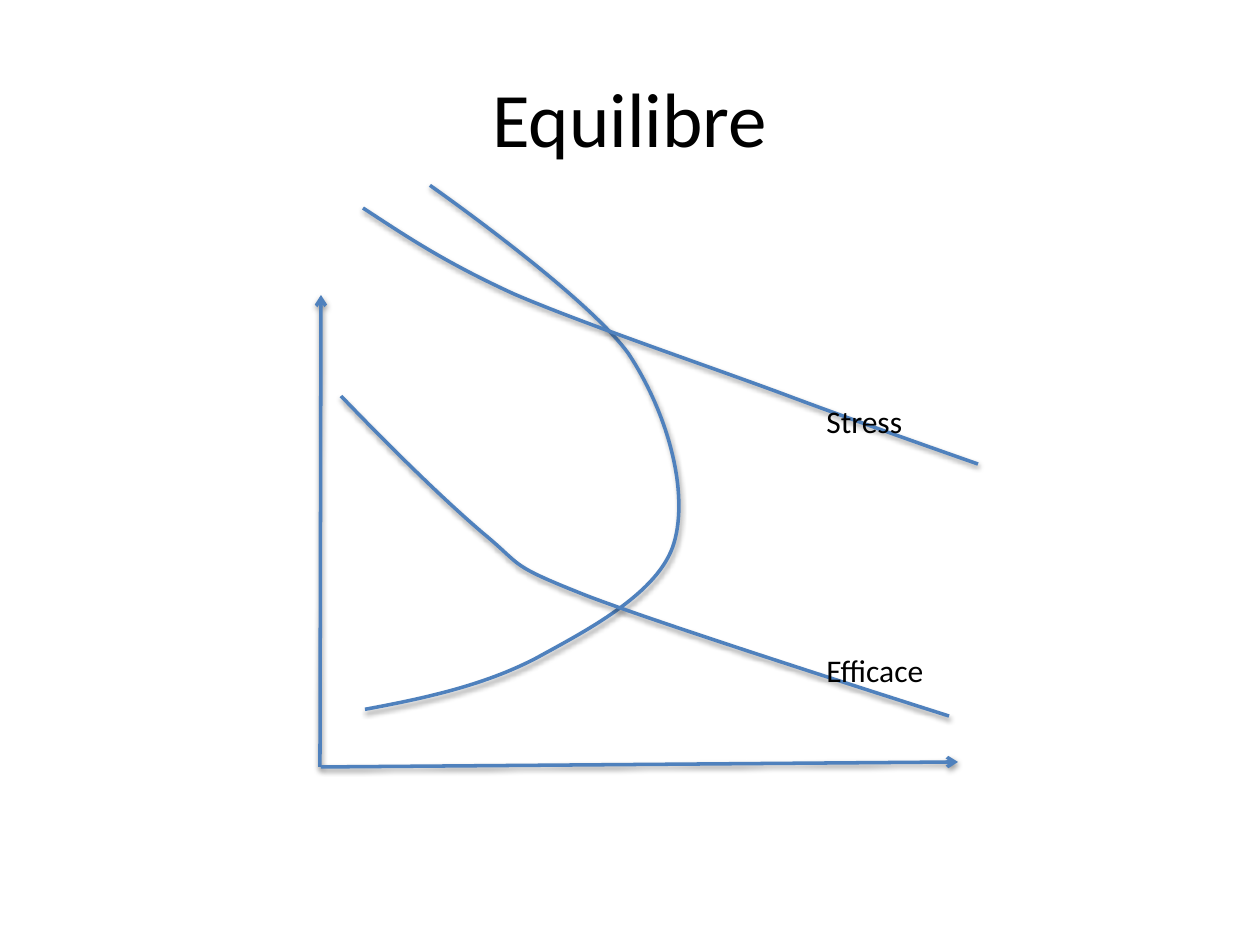
import math
import pptx
import pptx.util
import pptx.dml.color
import pptx.enum.shapes
import pptx.enum.text
import pptx.oxml
import pptx.oxml.ns

PX = 914400 / 126
THEME = {
    "font": "Calibri",
    "ink": pptx.dml.color.RGBColor.from_string("000000"),
    "blue": pptx.dml.color.RGBColor.from_string("4F81BD"),
    "title": pptx.util.Pt(44),
    "label": pptx.util.Pt(18),
    "line": pptx.util.Pt(2),
}
NS = pptx.oxml.ns.nsdecls("a")
SHADE = (
    f'<a:effectLst {NS}><a:outerShdw blurRad="39370" dist="20320" dir="5400000" '
    'rotWithShape="0"><a:srgbClr val="000000"><a:alpha val="38000"/></a:srgbClr>'
    "</a:outerShdw></a:effectLst>"
)
HEAD = f'<a:tailEnd {NS} type="arrow"/>'
AXES = [((0, 582), (1, 110)), ((1, 582), (638, 577))]
PIVOT = (219, 275)
CURVES = [
    (4.9, [(45, 524), (105, 513), (164, 500), (216, 473), (267, 445), (339, 408), (354, 358),
           (369, 308), (349, 230), (309, 169), (267, 110), (110, 0), (110, 0)]),
    (0, [(21, 211), (72, 264), (124, 315), (164, 349), (204, 382), (187, 379), (265, 410),
         (342, 440), (629, 531), (629, 531)]),
    (0, [(43, 23), (83, 49), (122, 76), (194, 109), (266, 140), (397, 184), (474, 213),
         (552, 242), (658, 279), (658, 279)]),
]
LABELS = [("Efficace", 494, 460, 123, 50), ("Stress", 494, 211, 102, 50)]


def emu(*nums):
    return [round(n * PX) for n in nums]


def apply(item, form):
    for key, val in form.items():
        setattr(item, key, val)


def write(slide, box, text, size, frame_form, align):
    frame = slide.shapes.add_textbox(*emu(*box)).text_frame
    apply(frame, frame_form)
    para = frame.paragraphs[0]
    para.alignment = align
    run = para.add_run()
    run.text = text
    apply(run.font, {"name": THEME["font"], "size": size})
    run.font.color.rgb = THEME["ink"]


def stroke(shape):
    shape.line.color.rgb = THEME["blue"]
    shape.line.width = THEME["line"]
    shape._element.spPr.append(pptx.oxml.parse_xml(SHADE))


def turn(spot, angle):
    rad = math.radians(angle)
    dx, dy = (a - b for a, b in zip(spot, PIVOT))
    return (PIVOT[0] + dx * math.cos(rad) - dy * math.sin(rad),
            PIVOT[1] + dx * math.sin(rad) + dy * math.cos(rad))


def trace(knots, steps=24):
    spots = [knots[0]]
    for i in range(0, len(knots) - 1, 3):
        for n in range(1, steps + 1):
            t = n / steps
            parts = ((1 - t) ** 3, 3 * t * (1 - t) ** 2, 3 * t * t * (1 - t), t ** 3)
            spots.append(tuple(sum(w * p[k] for w, p in zip(parts, knots[i:i + 4]))
                               for k in (0, 1)))
    return spots


def bend(shape, knots):
    marks = [f'<a:pt x="{x - shape.left}" y="{y - shape.top}"/>' for x, y in knots]
    groups = [("moveTo", marks[:1])]
    groups += [("cubicBezTo", marks[i:i + 3]) for i in range(1, len(marks), 3)]
    route = next(shape._element.spPr.iter(pptx.oxml.ns.qn("a:path")))
    for child in list(route):
        route.remove(child)
    for tag, pts in groups:
        route.append(pptx.oxml.parse_xml(f'<a:{tag} {NS}>{"".join(pts)}</a:{tag}>'))


def add_curve(slide, left, top, angle, knots):
    flat = [turn(k, -angle) for k in knots]
    place = [emu(left + x, top + y) for x, y in flat]
    spots = [emu(left + x, top + y) for x, y in trace(flat)]
    pen = slide.shapes.build_freeform(*spots[0])
    pen.add_line_segments(spots[1:], close=False)
    curve = pen.convert_to_shape()
    bend(curve, place)
    curve.rotation = angle
    curve.fill.background()
    stroke(curve)


def add_title(slide, box):
    form = {"word_wrap": True, "vertical_anchor": pptx.enum.text.MSO_ANCHOR.MIDDLE}
    write(slide, box, "Equilibre", THEME["title"], form, pptx.enum.text.PP_ALIGN.CENTER)


def add_graph(slide, left, top):
    for (x1, y1), (x2, y2) in AXES:
        axis = slide.shapes.add_connector(
            pptx.enum.shapes.MSO_CONNECTOR.STRAIGHT,
            *emu(left + x1, top + y1, left + x2, top + y2))
        stroke(axis)
        axis.line._get_or_add_ln().append(pptx.oxml.parse_xml(HEAD))
    for angle, knots in CURVES:
        add_curve(slide, left, top, angle, knots)
    form = {"word_wrap": False, "auto_size": pptx.enum.text.MSO_AUTO_SIZE.SHAPE_TO_FIT_TEXT}
    for text, x, y, wide, high in LABELS:
        write(slide, (left + x, top + y, wide, high), text, THEME["label"], form,
              pptx.enum.text.PP_ALIGN.LEFT)


def main():
    deck = pptx.Presentation()
    apply(deck, dict(zip(("slide_width", "slide_height"), emu(1260, 945))))
    slide = deck.slides.add_slide(deck.slide_layouts[6])
    add_title(slide, (63, 38, 1134, 158))
    add_graph(slide, 320, 185)
    deck.save("out.pptx")


if __name__ == "__main__":
    main()
